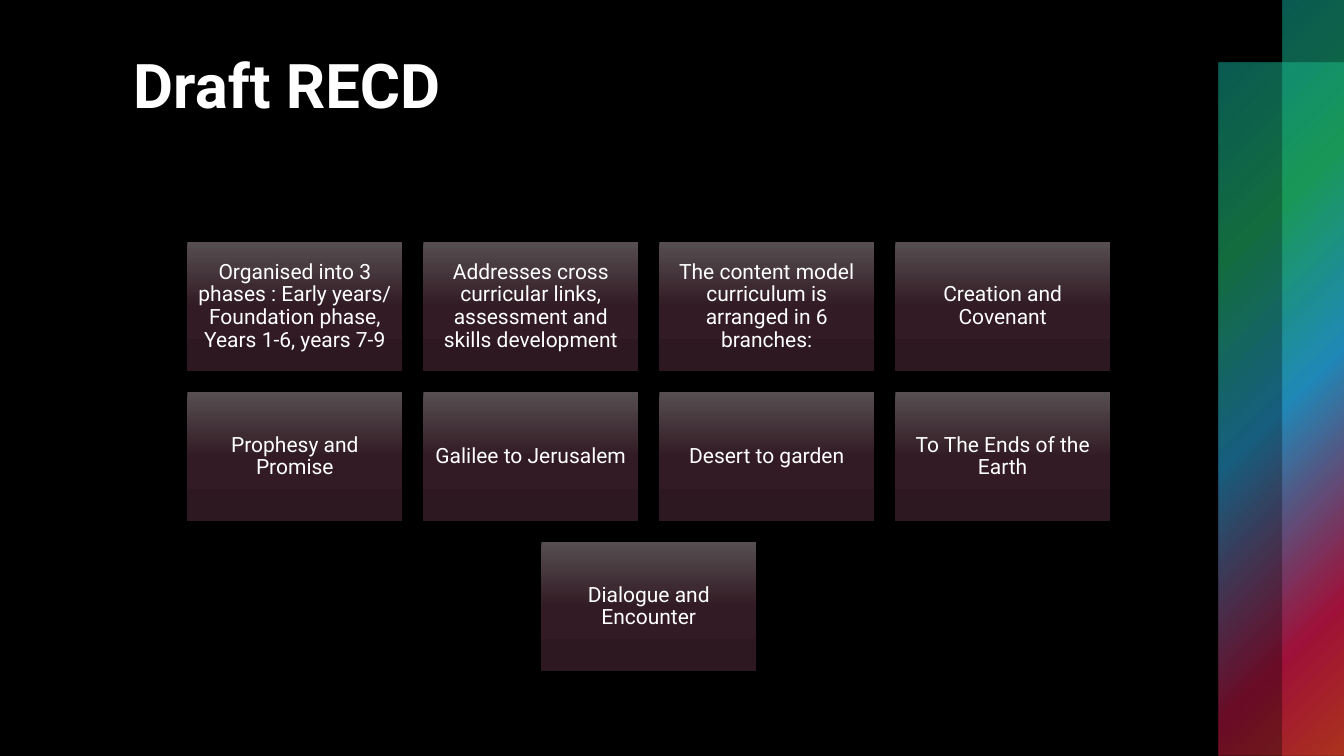
from dataclasses import dataclass

from lxml import etree
from pptx import Presentation
from pptx.dml.color import RGBColor
from pptx.enum import shapes, text
from pptx.oxml import ns
from pptx.util import Inches, Pt


@dataclass(frozen=True)
class Theme:
    font: str = "Roboto"
    background: str = "000000"
    ink: str = "FFFFFF"
    title_size: int = 44
    card_size: int = 15
    # Stops are (position %, colour, opacity %)
    card_stops: tuple = ((0, "564E51", 100), (50, "321B24", 100), (100, "2D1720", 100))
    band_stops: tuple = ((0, "14B4A3", 50), (25, "20B668", 60), (50, "29ACE7", 55),
                         (81, "D5174C", 50), (99, "E74429", 50))


CARDS = [
    "Organised into 3 phases : Early years/ Foundation phase, Years 1-6, years 7-9",
    "Addresses cross curricular links, assessment and skills development",
    "The content model curriculum is arranged in 6 branches:",
    "Creation and Covenant",
    "Prophesy and Promise",
    "Galilee to Jerusalem",
    "Desert to garden",
    "To The Ends of the Earth",
    "Dialogue and Encounter",
]
COLUMNS = 4
CARD_W, CARD_H = 2.13, 1.28
STEP_X, STEP_Y = 2.34, 1.49
GRID_LEFT, GRID_TOP = 1.86, 2.4
BANDS = [(12.09, 0.62, 1.24, 6.88), (12.72, 0, 0.62, 7.5)]


def write(tf, content, font, size, color, bold=False, align=None, spacing=None,
          anchor=text.MSO_ANCHOR.TOP, inset=None):
    tf.word_wrap = True
    tf.vertical_anchor = anchor
    if inset is not None:
        tf.margin_left = tf.margin_right = Inches(inset)
        tf.margin_top = tf.margin_bottom = Inches(inset)
    p = tf.paragraphs[0]
    p.alignment = align
    p.line_spacing = spacing
    r = p.add_run()
    r.text = content
    r.font.name, r.font.size, r.font.bold = font, Pt(size), bold
    r.font.color.rgb = RGBColor.from_string(color)


def set_gradient(sp, stops, radial=False):
    """Fill downwards, or outwards from the top left corner when radial."""
    def add(parent, tag, **attrs):
        return etree.SubElement(parent, ns.qn(tag), attrs)

    sp.fill.gradient()
    grad = sp._element.spPr.find(ns.qn("a:gradFill"))
    for child in list(grad):
        grad.remove(child)
    gs_list = add(grad, "a:gsLst")
    for position, color, opacity in stops:
        gs = add(gs_list, "a:gs", pos=str(position * 1000))
        clr = add(gs, "a:srgbClr", val=color)
        if opacity < 100:
            add(clr, "a:alpha", val=str(opacity * 1000))
    if radial:
        focus = add(grad, "a:path", path="circle")
        add(focus, "a:fillToRect", r="100000", b="100000")
        add(grad, "a:tileRect", l="-100000", t="-100000")
    else:
        add(grad, "a:lin", ang="5400000", scaled="0")


class SlideBuilder:
    def __init__(self, prs, theme):
        self.theme = theme
        self.slide = prs.slides.add_slide(prs.slide_layouts[5])
        fill = self.slide.background.fill
        fill.solid()
        fill.fore_color.rgb = RGBColor.from_string(theme.background)

    def title(self, content, left, top, width, height):
        sp = self.slide.shapes.title
        sp.left, sp.top = Inches(left), Inches(top)
        sp.width, sp.height = Inches(width), Inches(height)
        write(sp.text_frame, content, self.theme.font, self.theme.title_size,
              self.theme.ink, bold=True, align=text.PP_ALIGN.LEFT, spacing=0.9)

    def rectangle(self, left, top, width, height, stops, radial=False):
        sp = self.slide.shapes.add_shape(
            shapes.MSO_SHAPE.RECTANGLE,
            Inches(left), Inches(top), Inches(width), Inches(height))
        sp.shadow.inherit = False
        sp.line.fill.background()
        set_gradient(sp, stops, radial)
        return sp

    def band(self, left, top, width, height):
        self.rectangle(left, top, width, height, self.theme.band_stops, radial=True)

    def card(self, content, left, top):
        sp = self.rectangle(left, top, CARD_W, CARD_H, self.theme.card_stops)
        write(sp.text_frame, content, self.theme.font, self.theme.card_size,
              self.theme.ink, align=text.PP_ALIGN.CENTER, spacing=0.9,
              anchor=text.MSO_ANCHOR.MIDDLE, inset=0.06)

    def card_grid(self, contents):
        """Lay cards out in rows, centring a short last row."""
        for start in range(0, len(contents), COLUMNS):
            row = contents[start:start + COLUMNS]
            left = GRID_LEFT + (COLUMNS - len(row)) * STEP_X / 2
            top = GRID_TOP + start // COLUMNS * STEP_Y
            for column, content in enumerate(row):
                self.card(content, left + column * STEP_X, top)


def main():
    prs = Presentation()
    prs.slide_width, prs.slide_height = Inches(13.33), Inches(7.5)
    builder = SlideBuilder(prs, Theme())
    for band in BANDS:
        builder.band(*band)
    builder.title("Draft RECD", 1.22, 0.5, 10.37, 1.7)
    builder.card_grid(CARDS)
    prs.save("out.pptx")


if __name__ == "__main__":
    main()
